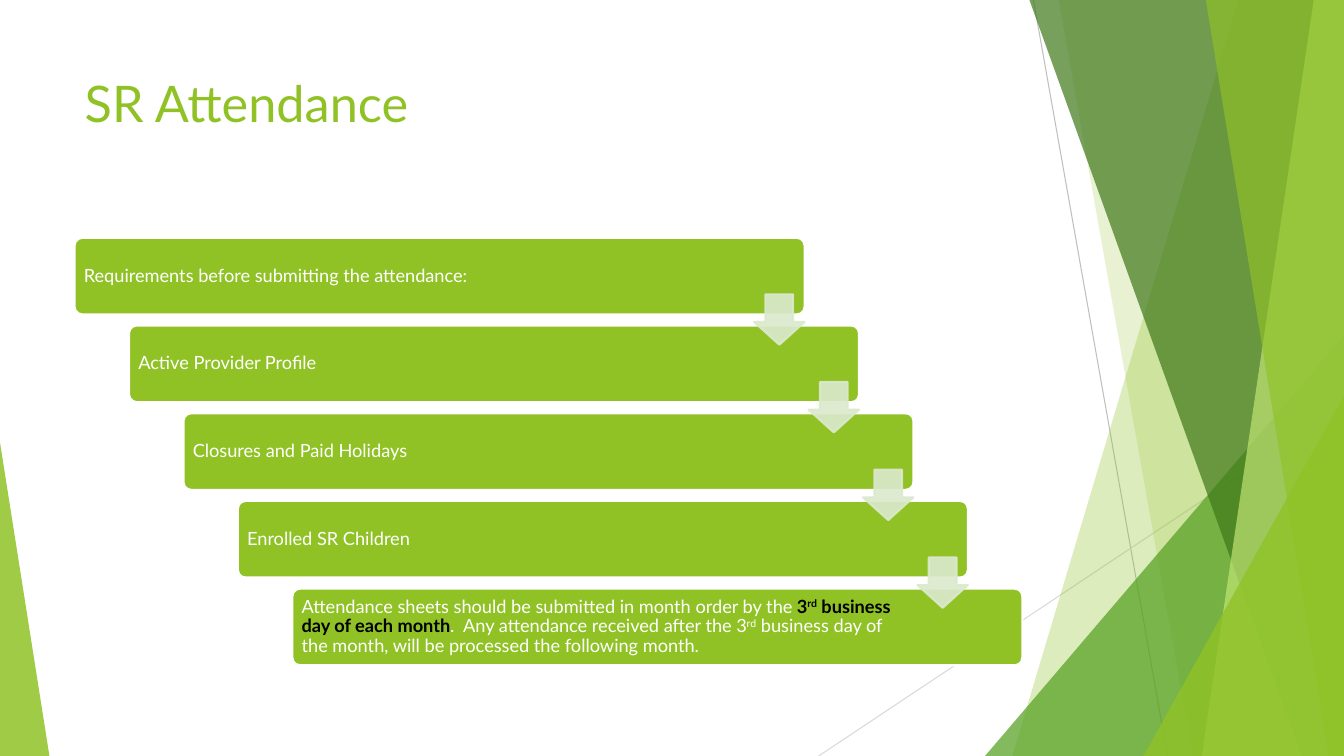
from dataclasses import dataclass

from lxml.etree import SubElement
from pptx import Presentation
from pptx.dml.color import RGBColor
from pptx.enum.shapes import MSO_CONNECTOR, MSO_SHAPE
from pptx.enum.text import MSO_ANCHOR, PP_ALIGN
from pptx.oxml.ns import qn
from pptx.util import Inches, Pt

FONT = "Lato"
COLOURS = {
    "lime": "90C226",
    "green": "54A021",
    "forest": "3F7819",
    "pale": "C0E474",
    "arrow": "DBE9CD",
    "grey": "BFBFBF",
    "light grey": "D9D9D9",
    "white": "FFFFFF",
    "black": "000000",
}
WIDTH, HEIGHT = 13.33, 7.5
STEP_X, STEP_Y = 0.54, 0.87


@dataclass
class Ray:
    start: tuple[float, float]
    end: tuple[float, float]
    colour: str


@dataclass
class Band:
    """A facet from the slide's right edge to a slanted left side."""
    top_x: float
    bottom_x: float
    colour: str
    opacity: int


@dataclass
class Wedge:
    left: float
    top: float
    width: float
    apex: float
    colour: str
    opacity: int


@dataclass
class Span:
    text: str
    strong: bool = False
    raised: bool = False


RAYS = [
    Ray((10.25, 0), (11.58, HEIGHT), "grey"),
    Ray((WIDTH, 4.03), (8.12, HEIGHT), "light grey"),
]
FACETS = [
    Band(12.28, 10.04, "lime", 30),
    Band(10.5, 11.83, "lime", 20),
    Wedge(9.77, 3.33, 3.56, 1, "green", 72),
    Band(10.21, 12.91, "forest", 70),
    Band(13.03, 11.92, "pale", 70),
    Band(11.96, 13.18, "lime", 65),
    Wedge(11.34, 3.93, 1.99, 1, "lime", 80),
    Wedge(0, 4.39, 0.49, 0, "lime", 85),
]
STEPS = [
    [Span("Requirements before submitting the attendance:")],
    [Span("Active Provider Profile")],
    [Span("Closures and Paid Holidays")],
    [Span("Enrolled SR Children")],
    [
        Span("Attendance sheets should be submitted in month order by the "),
        Span("3", strong=True),
        Span("rd", strong=True, raised=True),
        Span(" business day of each month", strong=True),
        Span(".  Any attendance received after the 3"),
        Span("rd", raised=True),
        Span(" business day of the month, will be processed the following month."),
    ],
]


def rgb(name: str) -> RGBColor:
    return RGBColor.from_string(COLOURS[name])


def paint(target, colour: str, opacity: int = 100) -> None:
    """Give a fill, or the fill of a line, a solid colour and an opacity in percent."""
    target.solid()
    target.fore_color.rgb = rgb(colour)
    if opacity < 100:
        solid = target._xPr.find(qn("a:solidFill"))
        SubElement(solid[0], qn("a:alpha")).set("val", str(opacity * 1000))


def draw_ray(page, ray: Ray) -> None:
    line = page.shapes.add_connector(
        MSO_CONNECTOR.STRAIGHT, *map(Inches, ray.start + ray.end)
    )
    line.line.color.rgb = rgb(ray.colour)
    line.line.width = Pt(0.75)
    SubElement(line._element.spPr, qn("a:effectLst"))


def draw_facet(page, facet: Band | Wedge) -> None:
    if isinstance(facet, Band):
        corners = [(WIDTH, 0), (WIDTH, HEIGHT), (facet.bottom_x, HEIGHT)]
        builder = page.shapes.build_freeform(Inches(facet.top_x), 0)
        builder.add_line_segments([(Inches(x), Inches(y)) for x, y in corners])
        shape = builder.convert_to_shape()
    else:
        shape = page.shapes.add_shape(
            MSO_SHAPE.ISOSCELES_TRIANGLE, Inches(facet.left), Inches(facet.top),
            Inches(facet.width), Inches(HEIGHT - facet.top),
        )
        shape.adjustments[0] = facet.apex
    paint(shape.fill, facet.colour, facet.opacity)
    shape.line.fill.background()
    shape.shadow.inherit = False


def draw_step(page, index: int, spans: list[Span]) -> None:
    box = page.shapes.add_shape(
        MSO_SHAPE.ROUNDED_RECTANGLE, Inches(0.74 + index * STEP_X),
        Inches(2.36 + index * STEP_Y), Inches(7.24), Inches(0.76),
    )
    box.adjustments[0] = 0.1
    paint(box.fill, "lime")
    paint(box.line.fill, "white")
    box.line.width = Pt(1.5)
    box.shadow.inherit = False

    frame = box.text_frame
    frame.word_wrap = True
    frame.vertical_anchor = MSO_ANCHOR.MIDDLE
    frame.margin_left, frame.margin_right = Inches(0.07), Inches(1.1)
    frame.margin_top = frame.margin_bottom = Inches(0.05)
    paragraph = frame.paragraphs[0]
    paragraph.alignment = PP_ALIGN.LEFT
    paragraph.line_spacing = 0.9
    for span in spans:
        run = paragraph.add_run()
        run.text = span.text
        run.font.name = FONT
        run.font.size = Pt(13)
        run.font.bold = span.strong
        run.font.color.rgb = rgb("black" if span.strong else "white")
        if span.raised:
            run._r.get_or_add_rPr().set("baseline", "30000")


def draw_arrow(page, index: int) -> None:
    arrow = page.shapes.add_shape(
        MSO_SHAPE.DOWN_ARROW, Inches(7.48 + index * STEP_X),
        Inches(2.92 + index * STEP_Y), Inches(0.5), Inches(0.5),
    )
    arrow.adjustments[0], arrow.adjustments[1] = 0.55, 0.45
    paint(arrow.fill, "arrow", 90)
    paint(arrow.line.fill, "arrow", 90)
    arrow.line.width = Pt(1.5)
    arrow.shadow.inherit = False


def write_title(page, text: str) -> None:
    title = page.shapes.title
    title.left, title.top = Inches(0.74), Inches(0.67)
    title.width, title.height = Inches(9.4), Inches(1.44)
    frame = title.text_frame
    frame.text = text
    frame.word_wrap = True
    frame.vertical_anchor = MSO_ANCHOR.TOP
    paragraph = frame.paragraphs[0]
    paragraph.alignment = PP_ALIGN.LEFT
    font = paragraph.runs[0].font
    font.name, font.size = FONT, Pt(36)
    font.color.rgb = rgb("lime")


def main() -> None:
    deck = Presentation()
    deck.slide_width, deck.slide_height = Inches(WIDTH), Inches(HEIGHT)
    page = deck.slides.add_slide(deck.slide_layouts.get_by_name("Title Only"))
    write_title(page, "SR Attendance")
    for ray in RAYS:
        draw_ray(page, ray)
    for facet in FACETS:
        draw_facet(page, facet)
    for index, spans in enumerate(STEPS):
        draw_step(page, index, spans)
    for index in range(len(STEPS) - 1):
        draw_arrow(page, index)
    deck.save("out.pptx")


if __name__ == "__main__":
    main()
